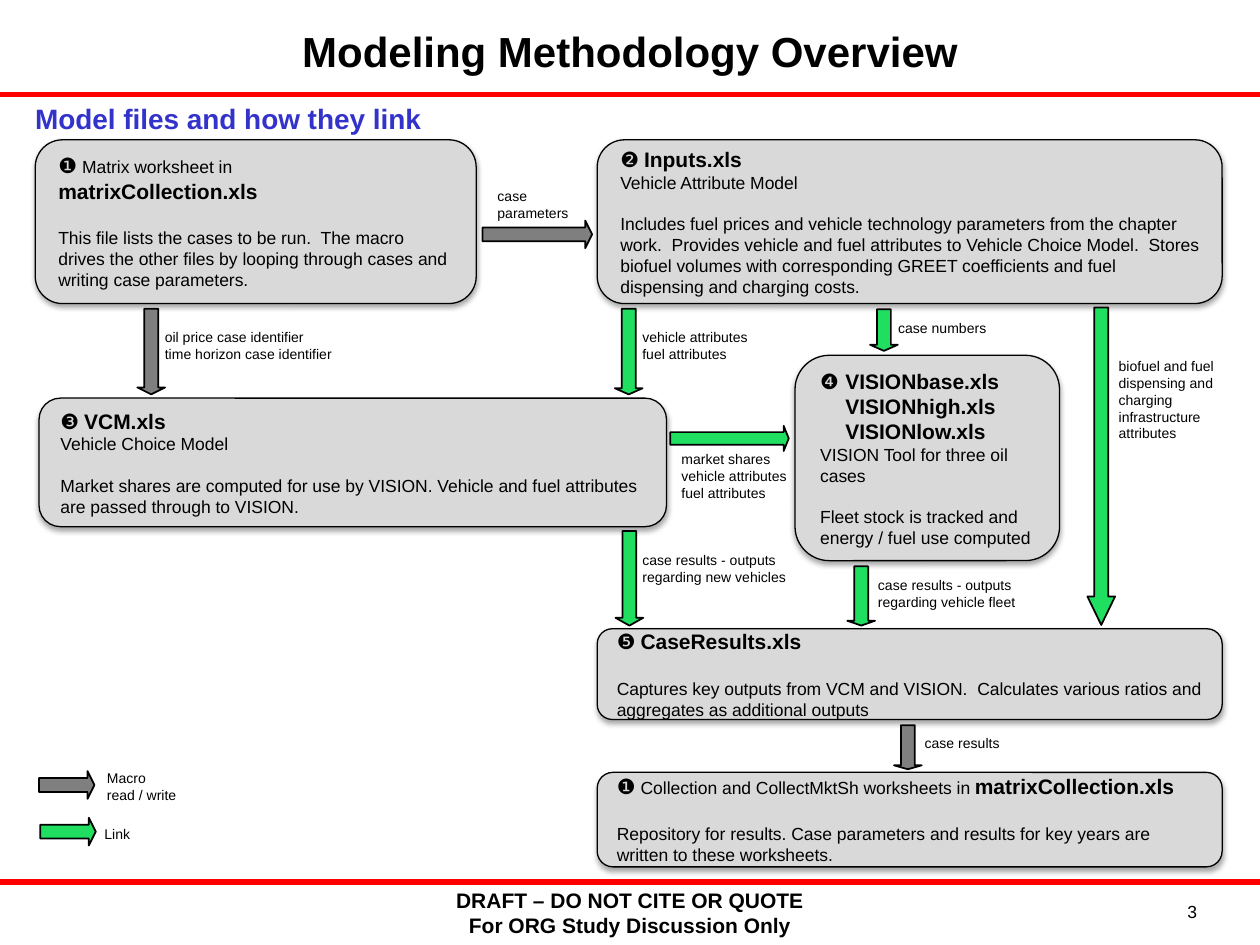
from dataclasses import dataclass

from lxml.etree import SubElement
from pptx import Presentation
from pptx.dml.color import RGBColor
from pptx.enum.shapes import MSO_CONNECTOR, MSO_SHAPE
from pptx.enum.text import MSO_ANCHOR as Anchor, PP_ALIGN as Align
from pptx.oxml.ns import qn
from pptx.util import Inches, Pt

COLORS = {
    "text": "000000", "rule": "FF0000", "heading": "3333CC",
    "box": "D9D9D9", "macro": "7F7F7F", "link": "20DE5F",
}
FONT = "Arial"
SMALL_GAP, LARGE_GAP = 11.5, 13.8  # one line of 10 pt or 12 pt text


@dataclass
class Span:
    text: str
    size: int = 10
    bold: bool = False


@dataclass
class Para:
    spans: list[Span]
    gap: float = 0


@dataclass
class Box:
    left: float
    top: float
    width: float
    height: float
    paras: list[Para]
    tab: float = 0


@dataclass
class Arrow:
    left: float
    top: float
    length: float
    kind: str
    head: float = 0.25
    down: bool = True
    thickness: float = 0.22


@dataclass
class Label:
    left: float
    top: float
    width: float
    height: float
    text: str


def name(text: str) -> Span:
    return Span(text, 12, True)


def heading(number: str, *spans: Span) -> Para:
    return Para([Span(number, 12), Span(" "), *spans])


def body(text: str, gap: float = 0) -> Para:
    return Para([Span(text)], gap)


BOXES = [
    Box(0.28, 1.11, 3.5, 1.3, [
        heading("❶", Span("Matrix worksheet in")),
        Para([name("matrixCollection.xls")]),
        body("This file lists the cases to be run.  The macro drives the other files by "
             "looping through cases and writing case parameters.", LARGE_GAP)]),
    Box(4.74, 1.11, 4.96, 1.3, [
        heading("❷", name("Inputs.xls")),
        body("Vehicle Attribute Model"),
        body("Includes fuel prices and vehicle technology parameters from the chapter work.  "
             "Provides vehicle and fuel attributes to Vehicle Choice Model.  Stores biofuel "
             "volumes with corresponding GREET coefficients and fuel dispensing and charging "
             "costs.", SMALL_GAP)]),
    Box(0.31, 3.16, 4.98, 1.02, [
        heading("❸", name("VCM.xls")),
        body("Vehicle Choice Model"),
        body("Market shares are computed for use by VISION. Vehicle and fuel attributes are "
             "passed through to VISION.", SMALL_GAP)]),
    Box(6.31, 2.82, 2.1, 1.63, [
        heading("❹", name("\tVISIONbase.xls")),
        Para([name("\tVISIONhigh.xls")]),
        Para([name("\tVISIONlow.xls")]),
        body("VISION Tool for three oil cases"),
        body("Fleet stock is tracked and energy / fuel use computed", SMALL_GAP)], tab=0.2),
    Box(4.74, 4.99, 4.96, 0.72, [
        heading("❺", name("CaseResults.xls")),
        body("Captures key outputs from VCM and VISION.  Calculates various ratios and "
             "aggregates as additional outputs", LARGE_GAP)]),
    Box(4.74, 6.13, 4.96, 0.75, [
        heading("❶", Span("Collection and CollectMktSh worksheets in "),
                name("matrixCollection.xls")),
        body("Repository for results. Case parameters and results for key years are written "
             "to these worksheets.", LARGE_GAP)]),
]

# Down arrows are given by their place before the quarter turn
ARROWS = [
    Arrow(3.83, 1.75, 0.87, "macro", down=False),
    Arrow(5.32, 3.38, 0.94, "link", 0.2, down=False, thickness=0.2),
    Arrow(0.86, 2.68, 0.68, "macro"),
    Arrow(4.65, 2.68, 0.68, "link", 0.22),
    Arrow(6.85, 2.51, 0.33, "link", 0.22),
    Arrow(7.48, 3.59, 2.52, "link", 1.03),
    Arrow(4.62, 4.48, 0.75, "link", 0.28),
    Arrow(6.6, 4.62, 0.47, "link", 0.17),
    Arrow(7.03, 5.82, 0.35, "macro", 0.14),
    # Legend
    Arrow(0.31, 6.12, 0.44, "macro", down=False),
    Arrow(0.32, 6.49, 0.44, "link", down=False),
]

LABELS = [
    Label(3.85, 1.44, 0.83, 0.37, "case\nparameters"),
    Label(1.21, 2.56, 1.72, 0.37, "oil price case identifier\ntime horizon case identifier"),
    Label(5, 2.56, 1.56, 0.37, "vehicle attributes\nfuel attributes"),
    Label(7.03, 2.49, 1.56, 0.24, "case numbers"),
    Label(8.78, 2.79, 1.05, 0.77,
          "biofuel and fuel dispensing and charging infrastructure attributes"),
    Label(5.31, 3.53, 1.13, 0.5, "market shares\nvehicle attributes\nfuel attributes"),
    Label(5, 4.33, 1.56, 0.37, "case results - outputs regarding new vehicles"),
    Label(6.87, 4.53, 1.37, 0.37, "case results - outputs regarding vehicle fleet"),
    Label(7.24, 5.78, 1.72, 0.23, "case results"),
    Label(0.75, 6.06, 0.88, 0.37, "Macro\nread / write"),
    Label(0.73, 6.5, 0.88, 0.23, "Link"),
]


def color(key: str) -> RGBColor:
    return RGBColor.from_string(COLORS[key])


def style(para, size: float, bold: bool = False, ink: str = "text", align=Align.LEFT) -> None:
    para.alignment = align
    font = para.font
    font.name, font.size, font.bold = FONT, Pt(size), bold
    font.color.rgb = color(ink)


def add_text(page, label: Label, size: float, bold=False, ink="text", align=Align.LEFT):
    frame = page.shapes.add_textbox(
        *map(Inches, (label.left, label.top, label.width, label.height))).text_frame
    frame.word_wrap = True
    frame.text = label.text
    for para in frame.paragraphs:
        style(para, size, bold, ink, align)
    return frame


def add_solid(page, preset, place: tuple, fill: str, line_width: float):
    shape = page.shapes.add_shape(preset, *map(Inches, place))
    shape.shadow.inherit = False
    shape.fill.solid()
    shape.fill.fore_color.rgb = color(fill)
    shape.line.color.rgb = color("text")
    shape.line.width = Pt(line_width)
    return shape


def add_shadow(shape) -> None:
    effects = shape._element.spPr.find(qn("a:effectLst"))
    shadow = SubElement(effects, qn("a:outerShdw"), blurRad=str(Pt(3.1)), dist=str(Pt(1.8)),
                        dir="5400000", rotWithShape="0")
    ink = SubElement(shadow, qn("a:srgbClr"), val=COLORS["text"])
    SubElement(ink, qn("a:alpha"), val="35000")


def add_box(page, box: Box) -> None:
    shape = add_solid(page, MSO_SHAPE.ROUNDED_RECTANGLE,
                      (box.left, box.top, box.width, box.height), "box", 0.75)
    add_shadow(shape)
    frame = shape.text_frame
    frame.word_wrap = True
    frame.vertical_anchor = Anchor.MIDDLE
    frame.margin_left = frame.margin_right = Inches(0.12)
    for index, item in enumerate(box.paras):
        para = frame.add_paragraph() if index else frame.paragraphs[0]
        para.space_before = Pt(item.gap)
        if box.tab:
            tabs = SubElement(para._p.get_or_add_pPr(), qn("a:tabLst"))
            SubElement(tabs, qn("a:tab"), pos=str(Inches(box.tab)), algn="l")
        style(para, item.spans[-1].size)
        for part in item.spans:
            span = para.add_run()
            span.text = part.text
            span.font.size, span.font.bold = Pt(part.size), part.bold


def add_arrow(page, arrow: Arrow) -> None:
    shape = add_solid(page, MSO_SHAPE.RIGHT_ARROW,
                      (arrow.left, arrow.top, arrow.length, arrow.thickness), arrow.kind, 1)
    shape.adjustments[1] = arrow.head
    shape.rotation = 90 if arrow.down else 0


def add_rule(page, top: float) -> None:
    rule = page.shapes.add_connector(
        MSO_CONNECTOR.STRAIGHT, *map(Inches, (0, top, 10, top)))
    rule.line.color.rgb = color("rule")
    rule.line.width = Pt(3)
    SubElement(rule._element.spPr, qn("a:effectLst"))


def main() -> None:
    deck = Presentation()
    deck.slide_width, deck.slide_height = Inches(10), Inches(7.5)
    page = deck.slides.add_slide(deck.slide_layouts[5])

    # Title and rules
    for top in (0.75, 7):
        add_rule(page, top)
    title = page.shapes.title
    title.left, title.top, title.width, title.height = map(Inches, (0.25, 0, 9.5, 0.8))
    title.text_frame.text = "Modeling Methodology Overview"
    title.text_frame.vertical_anchor = Anchor.MIDDLE
    style(title.text_frame.paragraphs[0], 24, True, align=Align.CENTER)
    add_text(page, Label(0.18, 0.76, 4.26, 0.37, "Model files and how they link"),
             16, True, "heading")

    # Flow diagram and legend
    for box in BOXES:
        add_box(page, box)
    for arrow in ARROWS:
        add_arrow(page, arrow)
    for label in LABELS:
        add_text(page, label, 8)

    # Footer and page number
    footer = add_text(page, Label(3.5, 6.98, 3, 0.52, "DRAFT – DO NOT CITE OR QUOTE\n"
                                  "For ORG Study Discussion Only"), 12, True, align=Align.CENTER)
    footer.margin_left = footer.margin_right = 0
    number = add_text(page, Label(9, 7.1, 0.5, 0.27, "3"), 10, align=Align.RIGHT)
    number.margin_right = 0
    footer.vertical_anchor = number.vertical_anchor = Anchor.MIDDLE
    deck.save("out.pptx")


if __name__ == "__main__":
    main()
